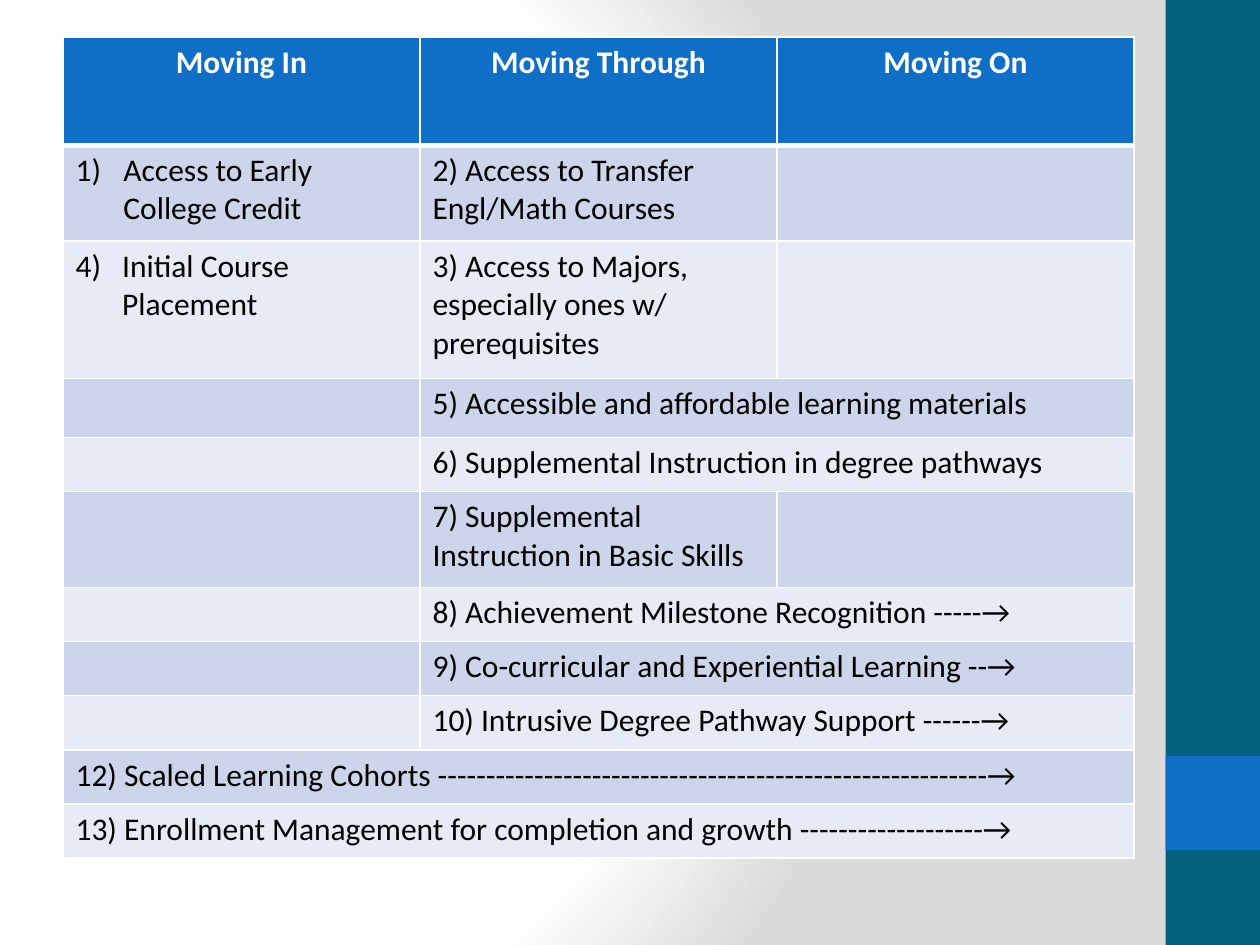
from pptx import Presentation
from pptx.dml.color import RGBColor
from pptx.enum.shapes import MSO_SHAPE
from pptx.enum.text import PP_ALIGN
from pptx.oxml import parse_xml
from pptx.oxml.ns import nsdecls
from pptx.util import Inches, Pt

RECT = MSO_SHAPE.RECTANGLE
CENTER, LEFT = PP_ALIGN.CENTER, PP_ALIGN.LEFT

COLORS = {"white": "FFFFFF", "grey": "DADADA", "teal": "04617B", "blue": "0F6FC6",
          "band": "CCD5EA", "light": "E7EBF5", "black": "000000"}
HEADER = {"size": Pt(18), "name": "Calibri", "bold": True}
BODY = {**HEADER, "bold": False}

HEADINGS = ["Moving In", "Moving Through", "Moving On"]
ROW_HEIGHTS = [0.86, 0.76, 1.09, 0.47, 0.43, 0.76] + [0.43] * 5
# Per body row: column, columns spanned, text, hanging indent, automatic number
ENTRIES = [
    [(0, 1, "Access to Early College Credit", 0.38, True),
     (1, 1, "2) Access to Transfer Engl/Math Courses", 0, False)],
    [(0, 1, "4)\tInitial Course Placement", 0.37, False),
     (1, 1, "3) Access to Majors, especially ones w/ prerequisites", 0, False)],
    [(1, 2, "5) Accessible and affordable learning materials", 0, False)],
    [(1, 2, "6) Supplemental Instruction in degree pathways", 0, False)],
    [(1, 1, "7) Supplemental Instruction in Basic Skills", 0, False)],
    [(1, 2, "8) Achievement Milestone Recognition -----→", 0, False)],
    [(1, 2, "9) Co-curricular and Experiential Learning --→", 0, False)],
    [(1, 2, "10) Intrusive Degree Pathway Support ------→", 0, False)],
    [(0, 3, "12) Scaled Learning Cohorts "
            "---------------------------------------------------------→", 0.37, False)],
    [(0, 3, "13) Enrollment Management for completion and growth "
            "-------------------→", 0.37, False)],
]


def rgb(name):
    return RGBColor.from_string(COLORS[name])


class SlideBuilder:
    """Holds the style and the current slide; places shapes by shares of its size."""

    def __init__(self, prs):
        self.w, self.h = prs.slide_width, prs.slide_height
        self.slide = prs.slides.add_slide(prs.slide_layouts[6])

    def background(self, stops):
        gs = "".join(f'<a:gs pos="{pos * 1000}"><a:srgbClr val="{COLORS[c]}"/></a:gs>'
                     for pos, c in stops)
        self.slide.element.cSld.insert(0, parse_xml(
            f'<p:bg {nsdecls("p", "a")}><p:bgPr><a:gradFill rotWithShape="1">'
            f'<a:gsLst>{gs}</a:gsLst><a:path path="circle">'
            '<a:fillToRect l="20000" t="50000" r="100000" b="50000"/></a:path>'
            '</a:gradFill><a:effectLst/></p:bgPr></p:bg>'))

    def block(self, x, y, w, h, color):
        sp = self.slide.shapes.add_shape(RECT, int(x * self.w), int(y * self.h),
                                         int(w * self.w), int(h * self.h))
        sp.shadow.inherit = False
        sp.fill.solid()
        sp.fill.fore_color.rgb = rgb(color)
        sp.line.fill.background()

    def table(self, x, y, w, heights, cols):
        frame = self.slide.shapes.add_table(len(heights), cols, int(x * self.w),
                                            int(y * self.h), int(w * self.w),
                                            Inches(sum(heights)))
        table = frame.table
        for row, height in zip(table.rows, heights):
            row.height = Inches(height)
        for i in range(len(heights)):
            color = "blue" if i == 0 else "band" if i % 2 else "light"
            for j in range(cols):
                cell = table.cell(i, j)
                self.borders(cell, {"L": 1, "R": 1, "T": 3 if i == 1 else 1,
                                    "B": 3 if i == 0 else 1})
                cell.fill.solid()
                cell.fill.fore_color.rgb = rgb(color)
        return table

    def borders(self, cell, widths):
        tcPr = cell._tc.get_or_add_tcPr()
        for side, width in widths.items():
            tcPr.append(parse_xml(
                f'<a:ln{side} {nsdecls("a")} w="{Pt(width)}"><a:solidFill>'
                f'<a:srgbClr val="{COLORS["white"]}"/></a:solidFill></a:ln{side}>'))

    def text(self, cell, text, style, color, align=LEFT, indent=0, numbered=False):
        p = cell.text_frame.paragraphs[0]
        p.alignment = align
        r = p.add_run()
        r.text = text
        for key, value in style.items():
            setattr(r.font, key, value)
        r.font.color.rgb = rgb(color)
        pPr = p._p.get_or_add_pPr()
        if indent:
            pPr.set("marL", str(Inches(indent)))
            pPr.set("indent", str(-Inches(indent)))
        if numbered:
            pPr.append(parse_xml(f'<a:buAutoNum {nsdecls("a")} type="arabicParenR"/>'))


def main():
    prs = Presentation()
    prs.slide_width, prs.slide_height = Inches(10), Inches(7.5)
    s = SlideBuilder(prs)

    # Background and side bar
    s.background([(0, "white"), (75, "white"), (100, "grey")])
    s.block(0.925, 0, 0.075, 1, "teal")
    s.block(0.925, 0.8, 0.075, 0.1, "blue")

    # Pathway table
    table = s.table(0.05, 0.039, 0.85, ROW_HEIGHTS, len(HEADINGS))
    for col, heading in enumerate(HEADINGS):
        s.text(table.cell(0, col), heading, HEADER, "white", CENTER)
    for row, entries in enumerate(ENTRIES, start=1):
        for col, span, text, indent, numbered in entries:
            cell = table.cell(row, col)
            if span > 1:
                cell.merge(table.cell(row, col + span - 1))
            s.text(cell, text, BODY, "black", indent=indent, numbered=numbered)

    prs.save("out.pptx")


if __name__ == "__main__":
    main()
